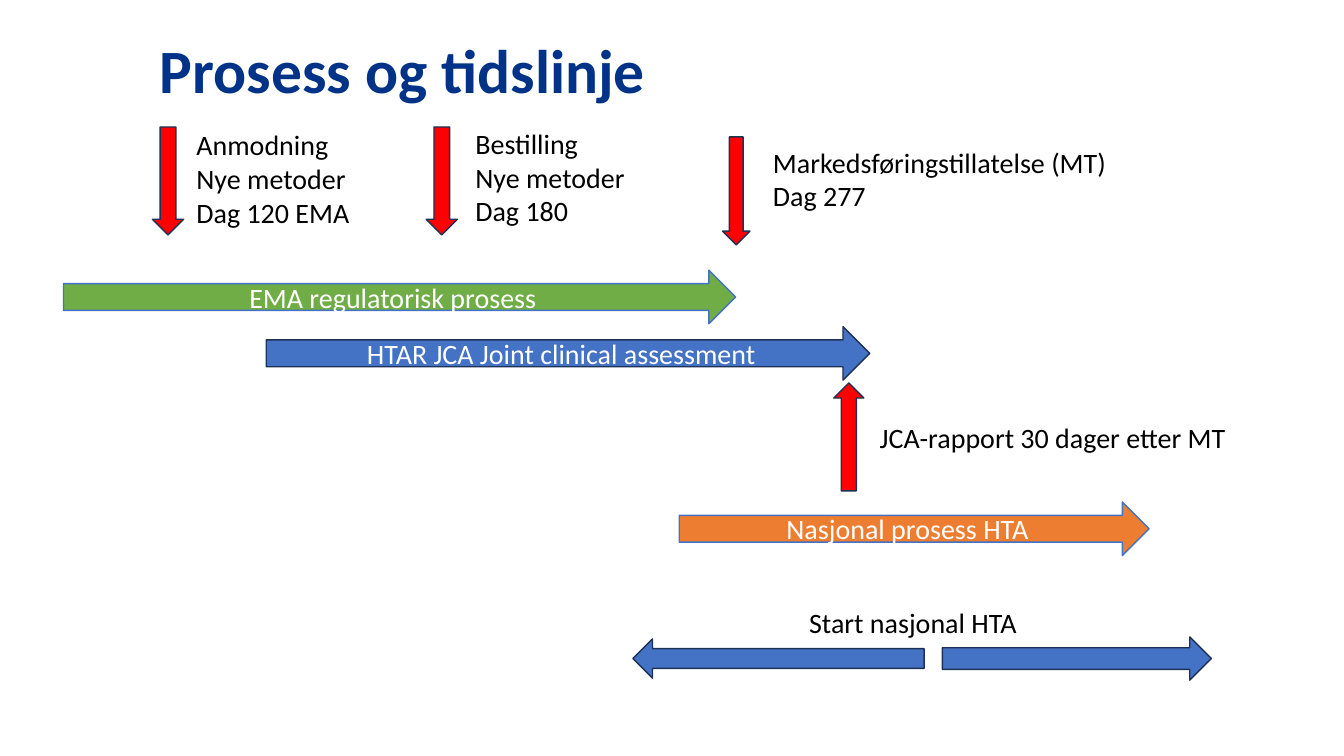
from pptx import Presentation
from pptx.dml.color import RGBColor
from pptx.enum.shapes import MSO_SHAPE as Preset
from pptx.enum.text import MSO_ANCHOR as Anchor, MSO_AUTO_SIZE as AutoSize, PP_ALIGN as Align
from pptx.util import Cm, Pt

NAVY, BLUE, RED, BLACK, WHITE = "1E3256", "4472C4", "FF0000", "000000", "FFFFFF"

deck = Presentation()
deck.slide_width, deck.slide_height = Cm(33.87), Cm(19.05)
slide = deck.slides.add_slide(deck.slide_layouts[6])


def write(shape, text, size=20, color=BLACK, bold=False, align=Align.LEFT,
          anchor=Anchor.TOP, wrap=True, fit=AutoSize.SHAPE_TO_FIT_TEXT):
    frame = shape.text_frame
    frame.text = text
    frame.word_wrap, frame.auto_size = wrap, fit
    frame.vertical_anchor = anchor
    for paragraph in frame.paragraphs:
        paragraph.alignment = align
        for run in paragraph.runs:
            run.font.name, run.font.size, run.font.bold = "Calibri", Pt(size), bold
            run.font.color.rgb = RGBColor.from_string(color)


def arrow(preset, left, top, width, height, fill, line=NAVY):
    shape = slide.shapes.add_shape(preset, Cm(left), Cm(top), Cm(width), Cm(height))
    shape.shadow.inherit = False
    shape.fill.solid()
    shape.fill.fore_color.rgb = RGBColor.from_string(fill)
    shape.line.color.rgb = RGBColor.from_string(line)
    shape.line.width = Pt(1)
    return shape


# Title
title = slide.shapes.add_textbox(Cm(3.78), Cm(0.69), Cm(25.2), Cm(2.13))
write(title, "Prosess og tidslinje", size=44, color="003388", bold=True)

# Process bars
for process, left, top, width, fill, line in [
    ("EMA regulatorisk prosess", 1.6, 6.81, 16.94, "70AD47", BLUE),
    ("HTAR JCA Joint clinical assessment", 6.71, 8.23, 15.21, BLUE, NAVY),
    ("Nasjonal prosess HTA", 17.12, 12.65, 11.84, "ED7D31", BLUE),
]:
    bar = arrow(Preset.RIGHT_ARROW, left, top, width, 1.35, fill, line)
    write(bar, process, color=WHITE, align=Align.CENTER, anchor=Anchor.MIDDLE, fit=AutoSize.NONE)

# Red milestone markers
for left, top, width, rotation in [
    (3.84, 3.2, 0.79, 0),
    (10.74, 3.2, 0.79, 0),
    (18.21, 3.45, 0.69, 0),
    (21.01, 9.65, 0.76, 180),
]:
    arrow(Preset.DOWN_ARROW, left, top, width, 2.72, RED).rotation = rotation

# Milestone labels; \v breaks a line within a paragraph
for milestone, left, top, width, height, wrap in [
    ("Anmodning\vNye metoder\nDag 120 EMA", 4.7, 3.1, 6.2, 2.82, True),
    ("Bestilling\vNye metoder\nDag 180", 11.73, 3.07, 5.38, 2.82, True),
    ("Markedsføringstillatelse (MT)\nDag 277", 19.23, 3.53, 9.02, 1.96, False),
    ("JCA-rapport 30 dager etter MT", 21.92, 10.46, 9.32, 1.12, False),
    ("Start nasjonal HTA", 20.14, 15.14, 5.79, 1.12, False),
]:
    label = slide.shapes.add_textbox(Cm(left), Cm(top), Cm(width), Cm(height))
    write(label, milestone, wrap=wrap)

# Possible start window of the national HTA
arrow(Preset.RIGHT_ARROW, 23.75, 16.05, 6.78, 1.09, BLUE)
arrow(Preset.LEFT_ARROW, 15.95, 16.1, 7.34, 0.99, BLUE)

deck.save("out.pptx")
